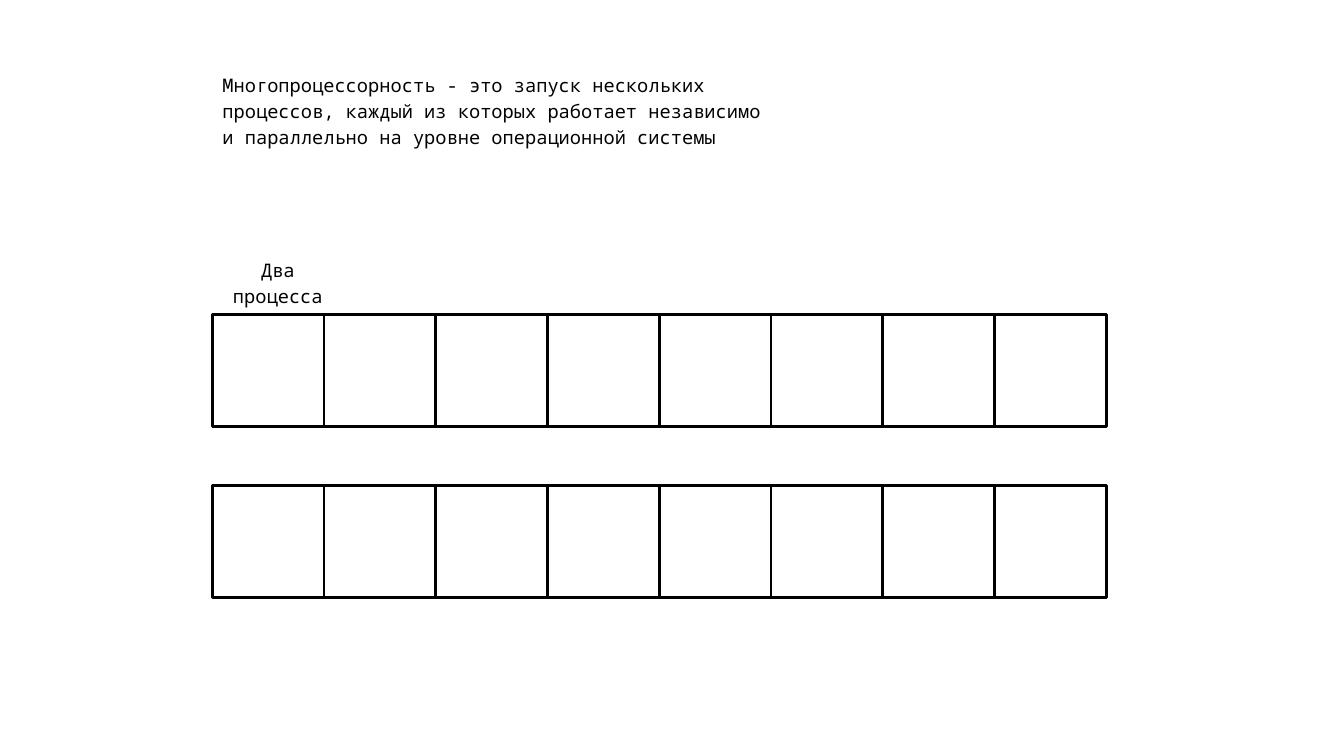
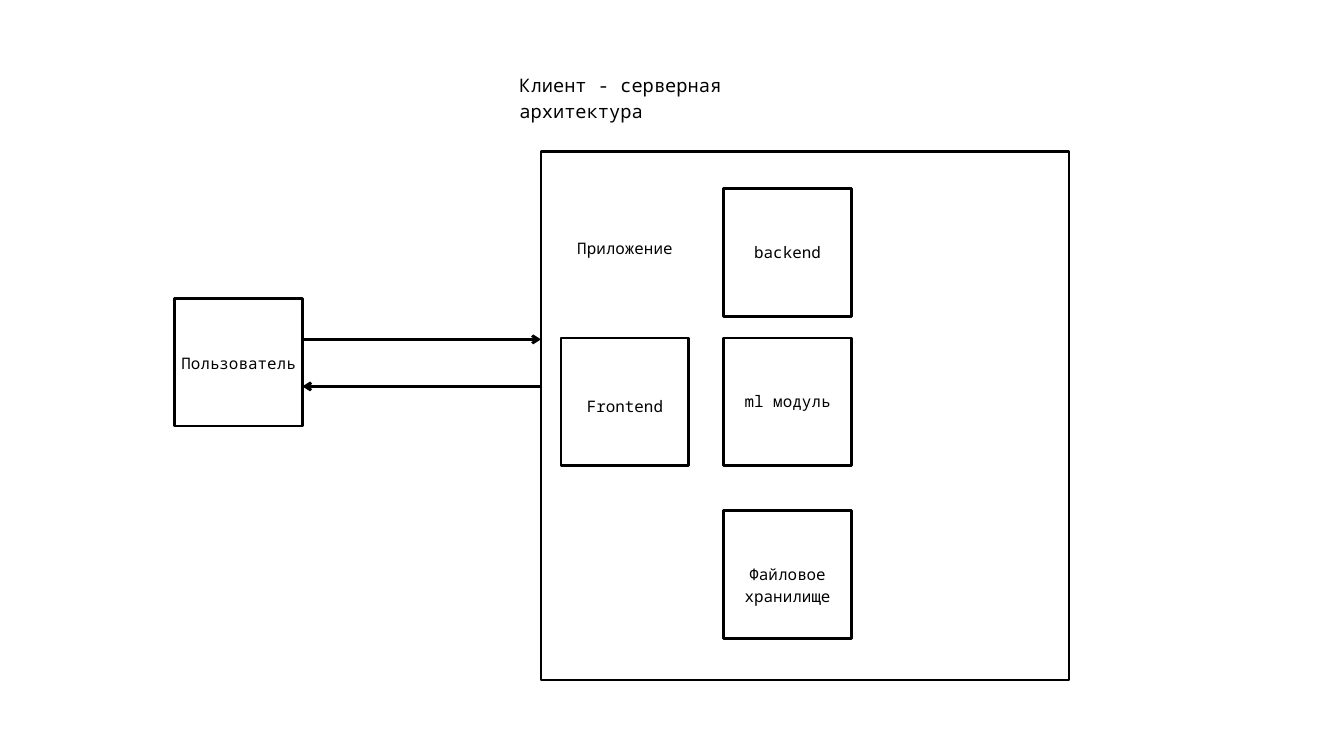
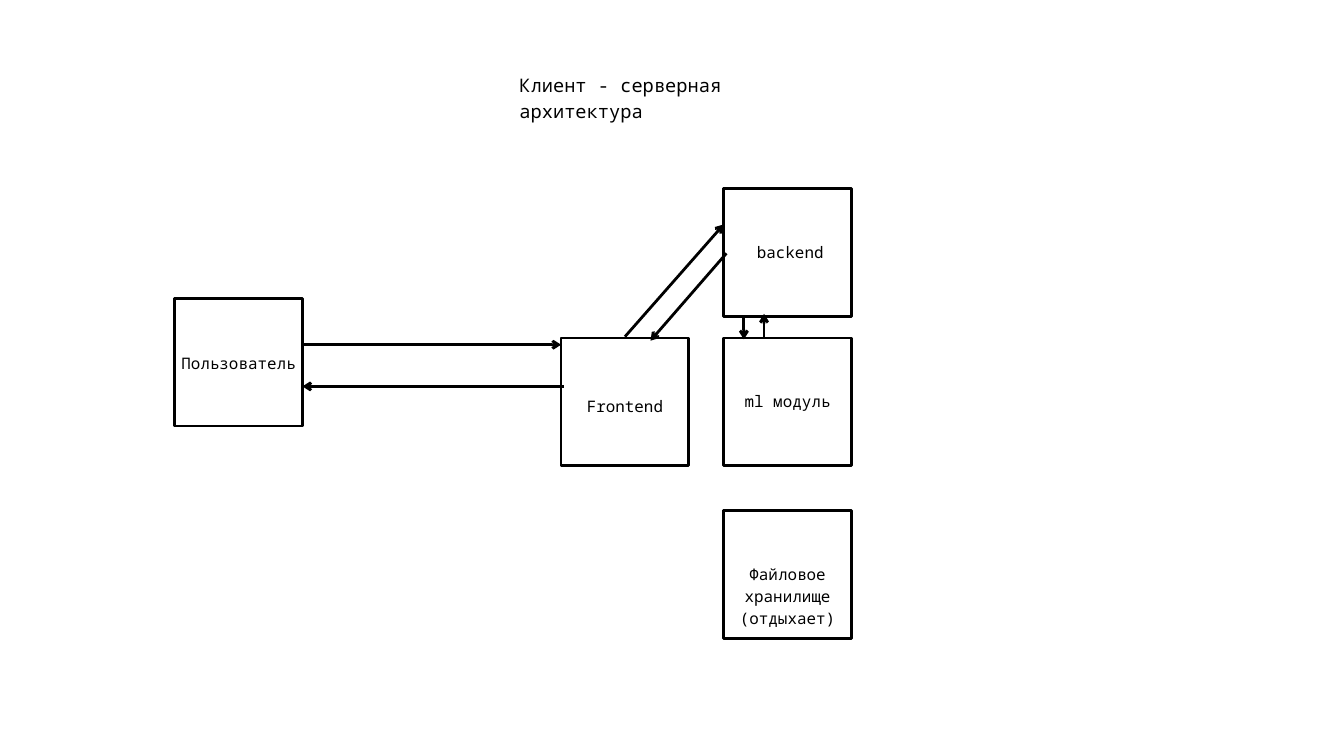
from lxml import etree
from pptx import Presentation
from pptx.dml.color import RGBColor
from pptx.enum.shapes import MSO_CONNECTOR, MSO_SHAPE
from pptx.enum.text import MSO_ANCHOR, MSO_AUTO_SIZE, PP_ALIGN
from pptx.oxml.ns import qn
from pptx.util import Inches, Pt

LEFT, CENTER = PP_ALIGN.LEFT, PP_ALIGN.CENTER
TOP = MSO_ANCHOR.TOP
FIT_SHAPE = MSO_AUTO_SIZE.SHAPE_TO_FIT_TEXT
RECTANGLE, STRAIGHT = MSO_SHAPE.RECTANGLE, MSO_CONNECTOR.STRAIGHT

FONT = "Noto Sans Mono"
BLACK, WHITE = "000000", "FFFFFF"
TITLE_SIZE, LABEL_SIZE = 20, 17
LINE_SPACING = 1.4
LINE_WIDTH = 3
TITLE_ONLY = 5

# Processes: two rows of equal cells
PROCESS_TITLE = ("Многопроцессорность - это запуск нескольких процессов, каждый из "
                 "которых работает независимо и параллельно на уровне операционной системы")
PROCESS_TITLE_AREA = (3.31, 1.04, 8.02, 1.18)
PROCESS_CAPTION = ("Два процесса", (3.17, 3.8, 1.93, 0.41))
CELL_COUNT = 8
ROW_LEFT, ROW_WIDTH = 3.16, 13.3
ROW_TOPS = (4.68, 7.23)

# Architecture: square components, their labels and the arrows between them
ARCHITECTURE_TITLE = "Клиент - серверная архитектура"
ARCHITECTURE_TITLE_AREA = (7.73, 1.04, 4.54, 0.41)
COMPONENT_SIZE = 1.9
USER_LEFT, FRONTEND_LEFT, SERVER_LEFT = 2.6, 8.35, 10.77
COMPONENTS = [
    (USER_LEFT, 4.44),
    (FRONTEND_LEFT, 5.03),
    (SERVER_LEFT, 5.03),
    (SERVER_LEFT, 7.6),
    (SERVER_LEFT, 2.81),
]
COMMON_LABELS = [
    ("Пользователь", USER_LEFT, 5.22),
    ("Frontend", FRONTEND_LEFT, 5.86),
    ("ml модуль", SERVER_LEFT, 5.78),
]
ARCHITECTURES = [
    {
        "frame": (8.05, 2.26, 7.86, 7.86),
        "labels": [
            ("Приложение", FRONTEND_LEFT, 3.5),
            ("backend", SERVER_LEFT, 3.56),
            ("Файловое хранилище", SERVER_LEFT, 8.35),
        ],
        "arrows": [(4.5, 5.05, 8.05, 5.05), (8.07, 5.75, 4.5, 5.75)],
    },
    {
        "frame": None,
        "labels": [
            ("backend", 10.81, 3.57),
            ("Файловое хранилище\n(отдыхает)", SERVER_LEFT, 8.35),
        ],
        "arrows": [
            (4.5, 5.13, 8.35, 5.13),
            (8.39, 5.75, 4.5, 5.75),
            (9.3, 5.01, 10.77, 3.34),
            (10.81, 3.77, 9.68, 5.07),
            (11.07, 4.71, 11.07, 5.05),
            (11.37, 5.03, 11.37, 4.67),
        ],
    },
]


def color(hex_string):
    return RGBColor.from_string(hex_string)


def inches(values):
    return [Inches(value) for value in values]


def write_text(shape, text, size, alignment):
    frame = shape.text_frame
    frame.text = text
    frame.word_wrap = True
    frame.auto_size = FIT_SHAPE
    frame.vertical_anchor = TOP
    frame.margin_left = frame.margin_right = frame.margin_top = frame.margin_bottom = 0
    for paragraph in frame.paragraphs:
        paragraph.alignment = alignment
        paragraph.line_spacing = Pt(size * LINE_SPACING)
        paragraph.font.name = FONT
        paragraph.font.size = Pt(size)
        paragraph.font.color.rgb = color(BLACK)


def add_titled_slide(presentation, text, area):
    slide = presentation.slides.add_slide(presentation.slide_layouts[TITLE_ONLY])
    title = slide.shapes.title
    title.left, title.top, title.width, title.height = inches(area)
    write_text(title, text, TITLE_SIZE, LEFT)
    return slide


def add_label(slide, text, area, size):
    write_text(slide.shapes.add_textbox(*inches(area)), text, size, CENTER)


def add_box(slide, area):
    box = slide.shapes.add_shape(RECTANGLE, *inches(area))
    box.shadow.inherit = False
    box.fill.solid()
    box.fill.fore_color.rgb = color(WHITE)
    box.line.color.rgb = color(BLACK)
    box.line.width = Pt(LINE_WIDTH)


def add_arrow(slide, ends):
    arrow = slide.shapes.add_connector(STRAIGHT, *inches(ends))
    arrow.line.color.rgb = color(BLACK)
    arrow.line.width = Pt(LINE_WIDTH)
    etree.SubElement(arrow.line._get_or_add_ln(), qn("a:tailEnd"), type="arrow")
    etree.SubElement(arrow._element.spPr, qn("a:effectLst"))


def add_process_slide(presentation):
    slide = add_titled_slide(presentation, PROCESS_TITLE, PROCESS_TITLE_AREA)
    cell_size = ROW_WIDTH / CELL_COUNT
    for top in ROW_TOPS:
        for column in range(CELL_COUNT):
            add_box(slide, (ROW_LEFT + column * cell_size, top, cell_size, cell_size))
    add_label(slide, *PROCESS_CAPTION, TITLE_SIZE)


def add_architecture_slide(presentation, architecture):
    slide = add_titled_slide(presentation, ARCHITECTURE_TITLE, ARCHITECTURE_TITLE_AREA)
    if architecture["frame"]:
        add_box(slide, architecture["frame"])
    for left, top in COMPONENTS:
        add_box(slide, (left, top, COMPONENT_SIZE, COMPONENT_SIZE))
    for text, left, top in COMMON_LABELS + architecture["labels"]:
        add_label(slide, text, (left, top, COMPONENT_SIZE, 0.34), LABEL_SIZE)
    for ends in architecture["arrows"]:
        add_arrow(slide, ends)


def main():
    presentation = Presentation()
    presentation.slide_width = Inches(20)
    presentation.slide_height = Inches(11.25)
    add_process_slide(presentation)
    for architecture in ARCHITECTURES:
        add_architecture_slide(presentation, architecture)
    presentation.save("out.pptx")


if __name__ == "__main__":
    main()
